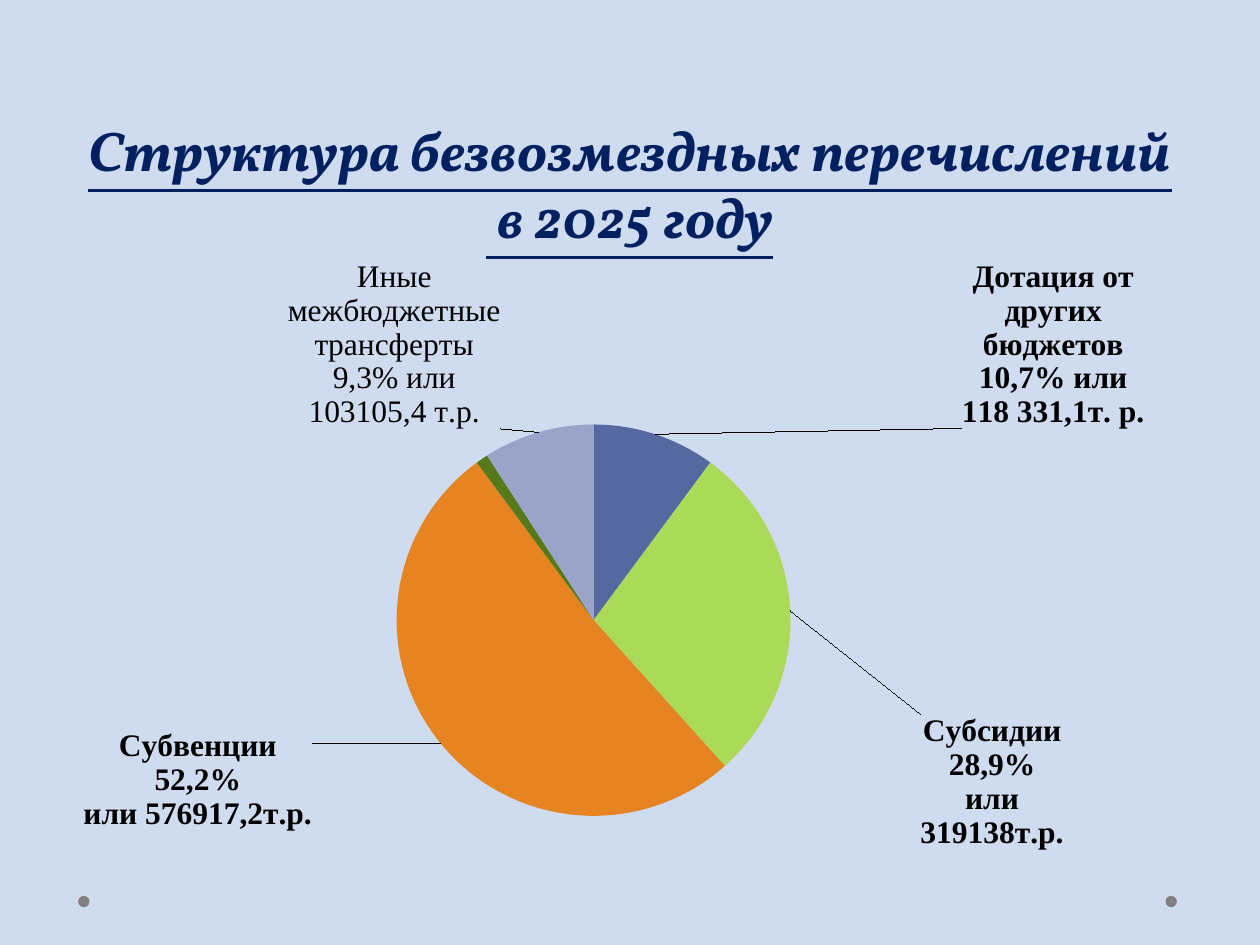
"""Build a slide with a pie chart of the structure of gratuitous receipts in 2025."""
from lxml import etree
from pptx import Presentation
from pptx.chart.data import CategoryChartData
from pptx.dml.color import RGBColor
from pptx.enum.chart import XL_CHART_TYPE, XL_LABEL_POSITION
from pptx.enum.shapes import MSO_SHAPE
from pptx.enum.text import MSO_ANCHOR, PP_ALIGN
from pptx.oxml.ns import qn
from pptx.util import Inches, Pt

PIE = XL_CHART_TYPE.PIE
OUTSIDE_END = XL_LABEL_POSITION.OUTSIDE_END
OVAL = MSO_SHAPE.OVAL
BOTTOM = MSO_ANCHOR.BOTTOM
CENTER = PP_ALIGN.CENTER

BACKGROUND = RGBColor(0xCF, 0xDC, 0xF0)
NAVY = RGBColor(0x00, 0x20, 0x60)
GRAY = RGBColor(0x80, 0x80, 0x80)
BLACK = RGBColor(0x00, 0x00, 0x00)
BLUE = RGBColor(0x56, 0x68, 0xA0)
LIME = RGBColor(0xAB, 0xD9, 0x58)
ORANGE = RGBColor(0xE6, 0x84, 0x22)
GREEN = RGBColor(0x56, 0x7A, 0x1A)
LAVENDER = RGBColor(0x9A, 0xA4, 0xC9)

CHART_WIDTH, CHART_HEIGHT = 9.37, 4.84
SLICES = [
    ("Дотация", 10, BLUE, "Дотация от других бюджетов\n10,7% или\n118 331,1т. р.", True, (2.42, 0.01)),
    ("Субсидии", 28, LIME, "Субсидии\n28,9%\nили\n319138т.р.", True, (0.97, 1.37)),
    ("Субвенции", 51, ORANGE, "Субвенции\n52,2%\nили 576917,2т.р.", True, (-0.97, -0.15)),
    ("", 0, None, "", True, None),
    ("", -1, GREEN, "", True, None),
    ("", 0, None, "", True, None),
    ("Иные межбюджетные трансферты", 9, LAVENDER,
     "Иные межбюджетные трансферты\n9,3% или\n103105,4 т.р.", False, (-0.28, 0.03)),
]


def add_layout(parent, index, values):
    layout = etree.Element(qn("c:layout"))
    manual = etree.SubElement(layout, qn("c:manualLayout"))
    for name, value in values:
        etree.SubElement(manual, qn(f"c:{name}")).set("val", str(value))
    parent.insert(index, layout)


presentation = Presentation()
presentation.slide_width = Inches(10)
presentation.slide_height = Inches(7.5)
slide = presentation.slides.add_slide(presentation.slide_layouts[6])
slide.background.fill.solid()
slide.background.fill.fore_color.rgb = BACKGROUND

for left in (9.25, 0.62):
    dot = slide.shapes.add_shape(OVAL, Inches(left), Inches(7.11), Inches(0.09), Inches(0.09))
    dot.shadow.inherit = False
    dot.fill.solid()
    dot.fill.fore_color.rgb = GRAY
    dot.line.fill.background()

title = slide.shapes.add_textbox(Inches(0), Inches(1.07), Inches(10), Inches(0.96))
title.text_frame.word_wrap = True
title.text_frame.vertical_anchor = BOTTOM
paragraph = title.text_frame.paragraphs[0]
paragraph.text = "Структура безвозмездных перечислений\v в 2025 году"
paragraph.alignment = CENTER
paragraph.font.name = "Vollkorn"
paragraph.font.size = Pt(32)
paragraph.font.bold = True
paragraph.font.italic = True
paragraph.font.underline = True
paragraph.font.color.rgb = NAVY

chart_data = CategoryChartData()
chart_data.categories = [row[0] for row in SLICES]
chart_data.add_series("Series 1", [row[1] for row in SLICES])
chart = slide.shapes.add_chart(
    PIE, Inches(0.35), Inches(2.03), Inches(CHART_WIDTH), Inches(CHART_HEIGHT), chart_data
).chart
chart.has_title = False
chart.has_legend = False
chart.font.name = "Vollkorn"
chart.font.size = Pt(18)
chart.font.color.rgb = BLACK

plot_area = chart.plots[0]._element.getparent()
for old_layout in plot_area.findall(qn("c:layout")):
    plot_area.remove(old_layout)
add_layout(plot_area, 0, [
    ("layoutTarget", "inner"), ("xMode", "edge"), ("yMode", "edge"),
    ("x", 0.133), ("y", 0.272), ("w", 0.665), ("h", 0.646),
])

series = chart.plots[0].series[0]
labels = series.data_labels
labels.show_value = False
labels.show_percentage = True
labels.show_category_name = True
labels.font.name = "Times New Roman"
labels.font.size = Pt(18)
labels.font.bold = True
labels.font.color.rgb = BLACK

for index, (category, value, color, text, bold, offset) in enumerate(SLICES):
    point = series.points[index]
    if color:
        point.format.fill.solid()
        point.format.fill.fore_color.rgb = color
        point.format.line.fill.background()
    point.data_label.position = OUTSIDE_END
    label = labels._element.xpath(f'c:dLbl[c:idx/@val="{index}"]')[0]
    if not text:
        for child in list(label)[1:]:
            label.remove(child)
        etree.SubElement(label, qn("c:delete")).set("val", "1")
        continue
    text_frame = point.data_label.text_frame
    text_frame.text = text
    for paragraph in text_frame.paragraphs:
        paragraph.alignment = CENTER
        for run in paragraph.runs:
            run.font.name = "Times New Roman"
            run.font.size = Pt(18)
            run.font.bold = bold
            run.font.color.rgb = BLACK
    add_layout(label, 1, [
        ("x", round(offset[0] / CHART_WIDTH, 3)), ("y", round(offset[1] / CHART_HEIGHT, 3)),
    ])

presentation.save("out.pptx")
